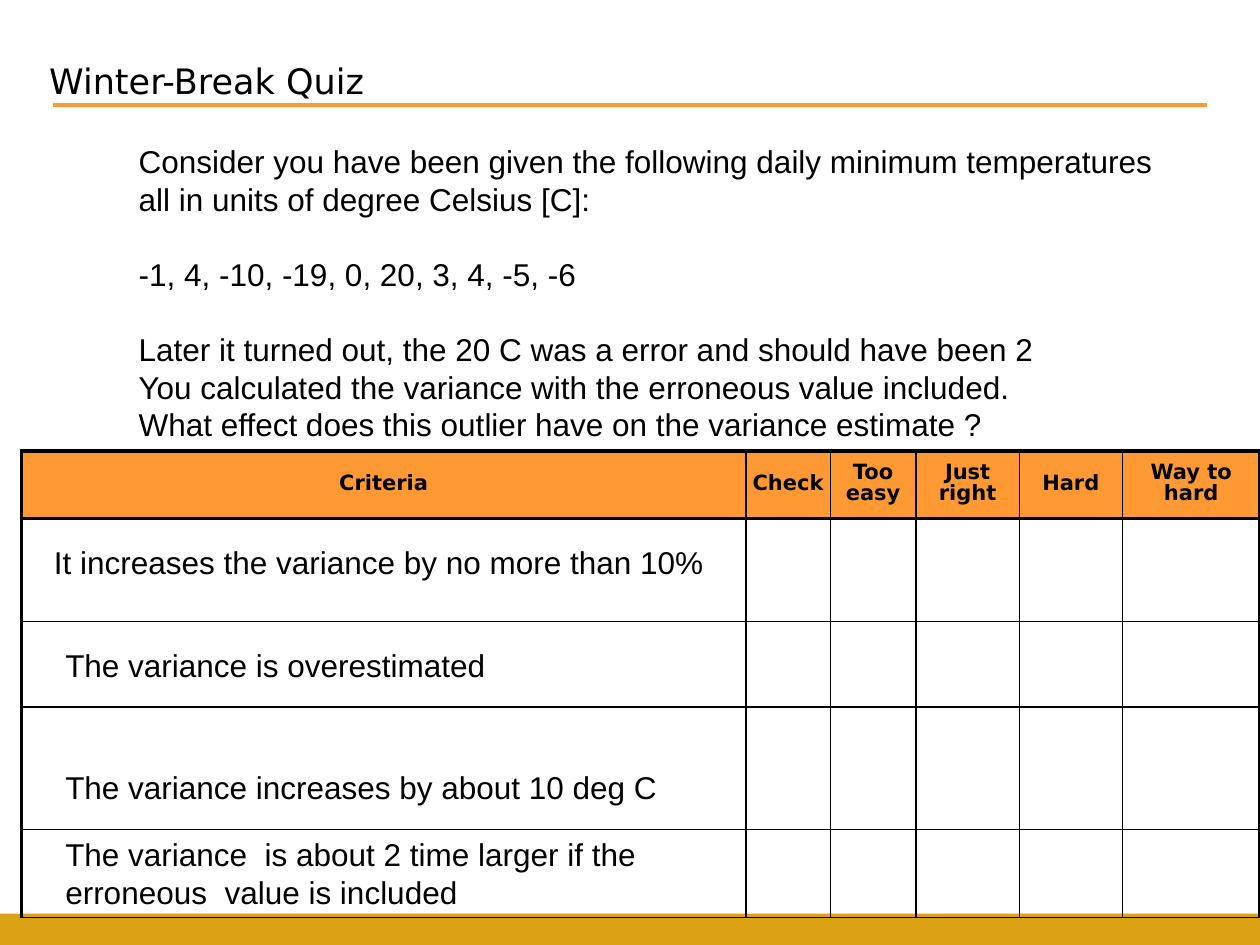
from dataclasses import dataclass

from pptx import Presentation
from pptx.dml.color import RGBColor
from pptx.enum.shapes import MSO_CONNECTOR, MSO_SHAPE
from pptx.enum.text import MSO_ANCHOR, PP_ALIGN
from pptx.oxml.ns import qn
from pptx.util import Inches, Pt
from lxml.etree import SubElement


@dataclass(frozen=True)
class Theme:
    black: str = "000000"
    orange: str = "FF9933"
    gold: str = "DBA215"
    head_font: str = "DejaVu Sans"
    body_font: str = "Arial"
    title: float = 20
    body: float = 18
    header: float = 12
    line: float = 21.5
    thick: float = 2.25
    thin: float = 1


T = Theme()

QUESTION = [  # groups of lines, set apart by one line of space
    ["Consider you have been given the following daily minimum temperatures",
     "all in units of degree Celsius [C]:"],
    ["-1, 4, -10, -19, 0, 20, 3, 4, -5, -6"],
    ["Later it turned out, the 20 C was a error and should have been 2",
     "You calculated the variance with the erroneous value included.",
     "What effect does this outlier have on the variance estimate ?"],
]
HEADERS = ["Criteria", "Check", "Too easy", "Just right", "Hard", "Way to hard"]
COL_WIDTHS = [5.75, 0.67, 0.68, 0.82, 0.82, 1.09]
ROW_HEIGHTS = [0.53, 0.82, 0.68, 0.97, 0.7]
ANSWERS = [  # left, top, width, height, lines
    (0.33, 4.26, 5.41, 0.4, ["It increases the variance by no more than 10%"]),
    (0.42, 5.08, 3.57, 0.4, ["The variance is overestimated"]),
    (0.42, 6.05, 4.94, 0.4, ["The variance increases by about 10 deg C"]),
    (0.42, 6.58, 4.84, 0.71, ["The variance  is about 2 time larger if the",
                              "erroneous  value is included"]),
]


def write(p, text, size=T.body, font=T.body_font, bold=False,
          align=PP_ALIGN.LEFT, spacing=None, before=0):
    p.alignment = align
    p.space_before, p.space_after = Pt(before), Pt(0)
    if spacing:
        p.line_spacing = Pt(spacing)
    r = p.add_run()
    r.text = text
    r.font.size, r.font.name, r.font.bold = Pt(size), font, bold
    r.font.color.rgb = RGBColor.from_string(T.black)


def write_groups(tf, groups):
    lines = [(text, i > 0 and j == 0)
             for i, group in enumerate(groups) for j, text in enumerate(group)]
    for n, (text, gap) in enumerate(lines):
        p = tf.add_paragraph() if n else tf.paragraphs[0]
        write(p, text, spacing=T.line, before=T.line if gap else 0)


def place(sp, left, top, width, height, anchor=MSO_ANCHOR.TOP):
    sp.left, sp.top = Inches(left), Inches(top)
    sp.width, sp.height = Inches(width), Inches(height)
    sp.text_frame.word_wrap = True
    sp.text_frame.vertical_anchor = anchor
    return sp.text_frame


def remove_bullet(p):
    pPr = p._p.get_or_add_pPr()
    pPr.set("marL", "0")
    pPr.set("indent", "0")
    SubElement(pPr, qn("a:buNone"))


def add_bar(s, left, top, width, height, color):
    sp = s.shapes.add_shape(MSO_SHAPE.RECTANGLE, Inches(left), Inches(top),
                            Inches(width), Inches(height))
    sp.shadow.inherit = False
    sp.fill.solid()
    sp.fill.fore_color.rgb = RGBColor.from_string(color)
    sp.line.fill.background()


def add_rule(s, x1, x2, y, color, width):
    line = s.shapes.add_connector(MSO_CONNECTOR.STRAIGHT, Inches(x1), Inches(y),
                                  Inches(x2), Inches(y))
    line.line.color.rgb = RGBColor.from_string(color)
    line.line.width = Pt(width)
    SubElement(line._element.spPr, qn("a:effectLst"))


def set_borders(cell, **widths):
    tcPr = cell._tc.get_or_add_tcPr()
    for side in "LRTB":
        ln = SubElement(tcPr, qn(f"a:ln{side}"), w=str(Pt(widths[side])))
        fill = SubElement(ln, qn("a:solidFill"))
        SubElement(fill, qn("a:srgbClr"), val=T.black)


def add_rating_table(s, left, top):
    rows, cols = len(ROW_HEIGHTS), len(COL_WIDTHS)
    table = s.shapes.add_table(rows, cols, Inches(left), Inches(top),
                               Inches(sum(COL_WIDTHS)), Inches(sum(ROW_HEIGHTS))).table
    table.horz_banding = False
    for col, width in zip(table.columns, COL_WIDTHS):
        col.width = Inches(width)
    for row, height in zip(table.rows, ROW_HEIGHTS):
        row.height = Inches(height)

    # Thick lines on the sides, on top and below the header
    for i in range(rows):
        for j in range(cols):
            cell = table.cell(i, j)
            set_borders(cell,
                        L=T.thick if j == 0 else T.thin,
                        R=T.thick if j == cols - 1 else T.thin,
                        T=T.thick if i <= 1 else T.thin,
                        B=T.thick if i == 0 else T.thin)
            if i:
                cell.fill.background()
                continue
            cell.fill.solid()
            cell.fill.fore_color.rgb = RGBColor.from_string(T.orange)
            cell.vertical_anchor = MSO_ANCHOR.MIDDLE
            cell.margin_left = cell.margin_right = Inches(0.05)
            cell.margin_top = cell.margin_bottom = Inches(0.1)
            write(cell.text_frame.paragraphs[0], HEADERS[j], size=T.header,
                  font=T.head_font, bold=True, align=PP_ALIGN.CENTER, spacing=12)


def main():
    prs = Presentation()
    prs.slide_width, prs.slide_height = Inches(10), Inches(7.5)
    s = prs.slides.add_slide(prs.slide_layouts[1])

    # Title, rule and footer bar
    add_bar(s, 0, 7.25, 10, 0.25, T.gold)
    tf = place(s.shapes.title, 0.29, 0.42, 2.79, 0.44, MSO_ANCHOR.MIDDLE)
    write(tf.paragraphs[0], "Winter-Break Quiz", size=T.title, font=T.head_font)
    add_rule(s, 0.42, 9.58, 0.83, T.orange, T.thick)

    # Rating table
    add_rating_table(s, 0.17, 3.58)

    # Question
    tf = place(s.placeholders[1], 1, 1.08, 8.32, 2.52)
    write_groups(tf, QUESTION)
    for p in tf.paragraphs:
        remove_bullet(p)

    # Answers over the first column
    for left, top, width, height, lines in ANSWERS:
        box = s.shapes.add_textbox(0, 0, 0, 0)
        write_groups(place(box, left, top, width, height), [lines])

    prs.save("out.pptx")


if __name__ == "__main__":
    main()
